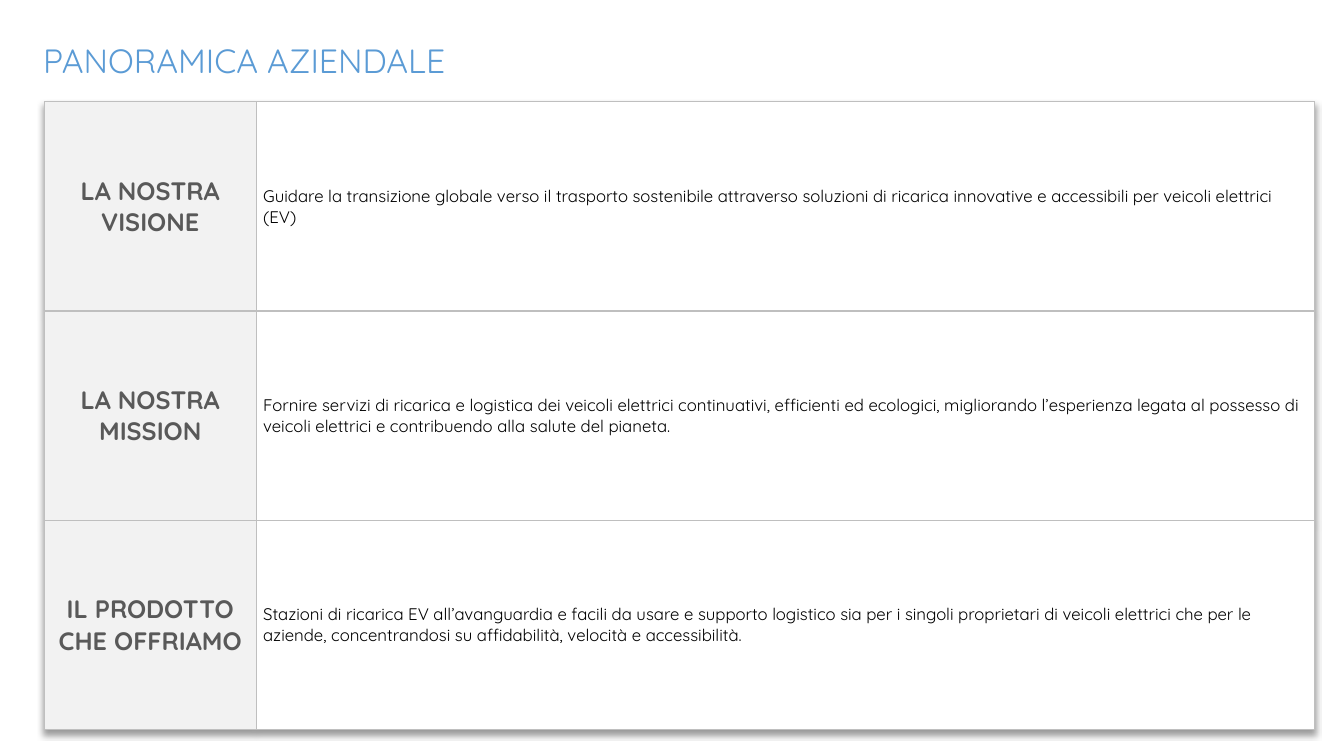
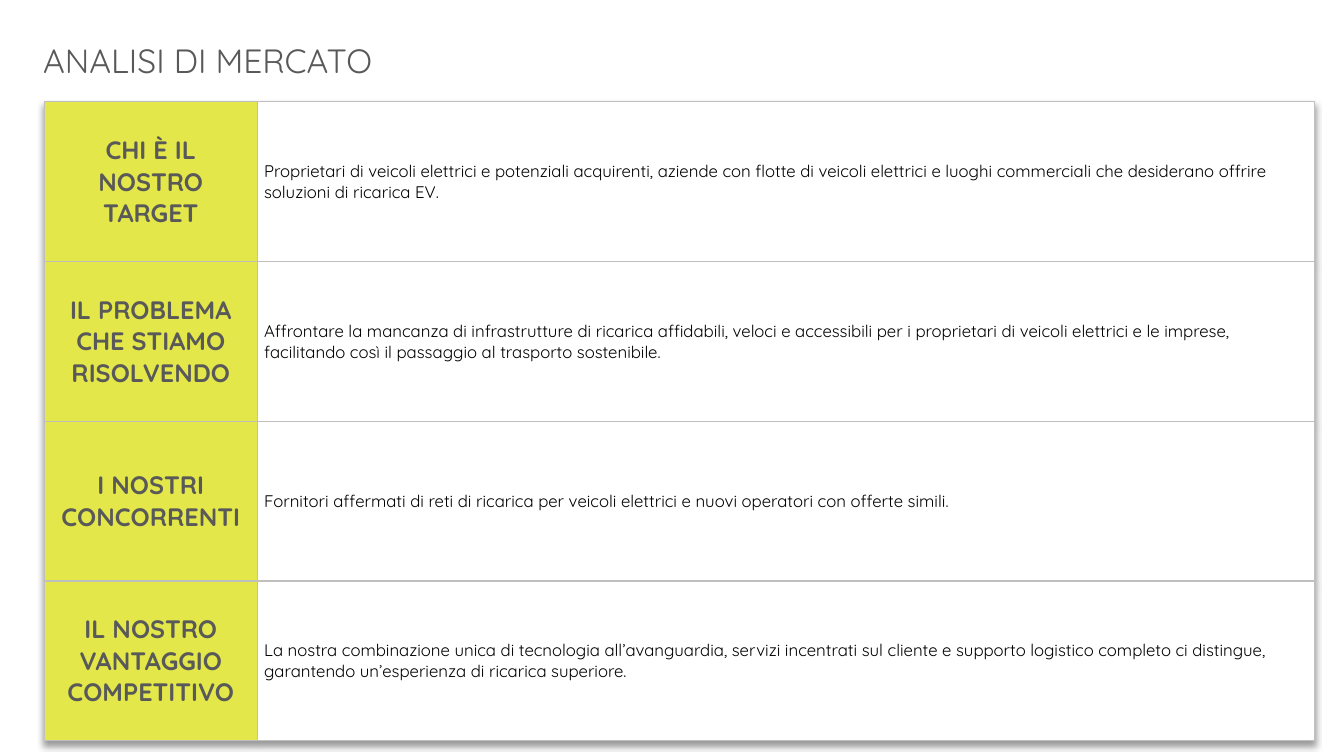
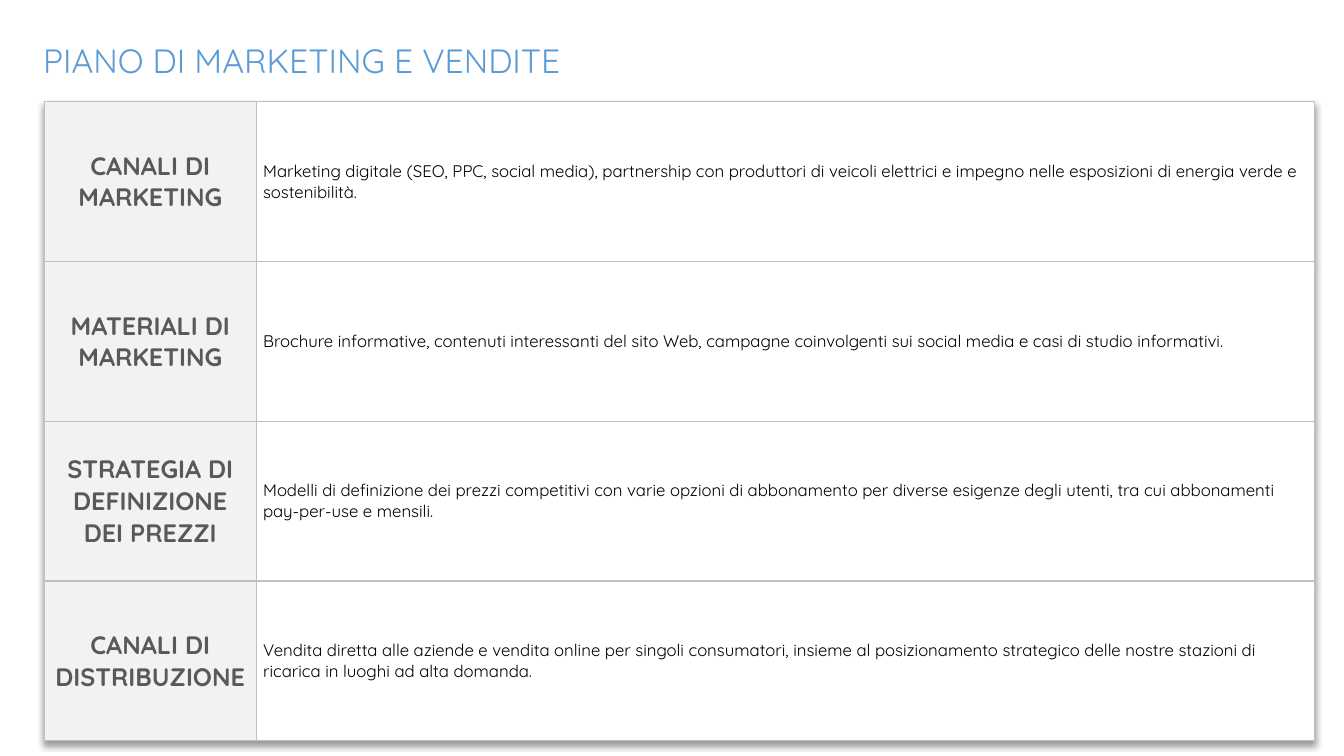
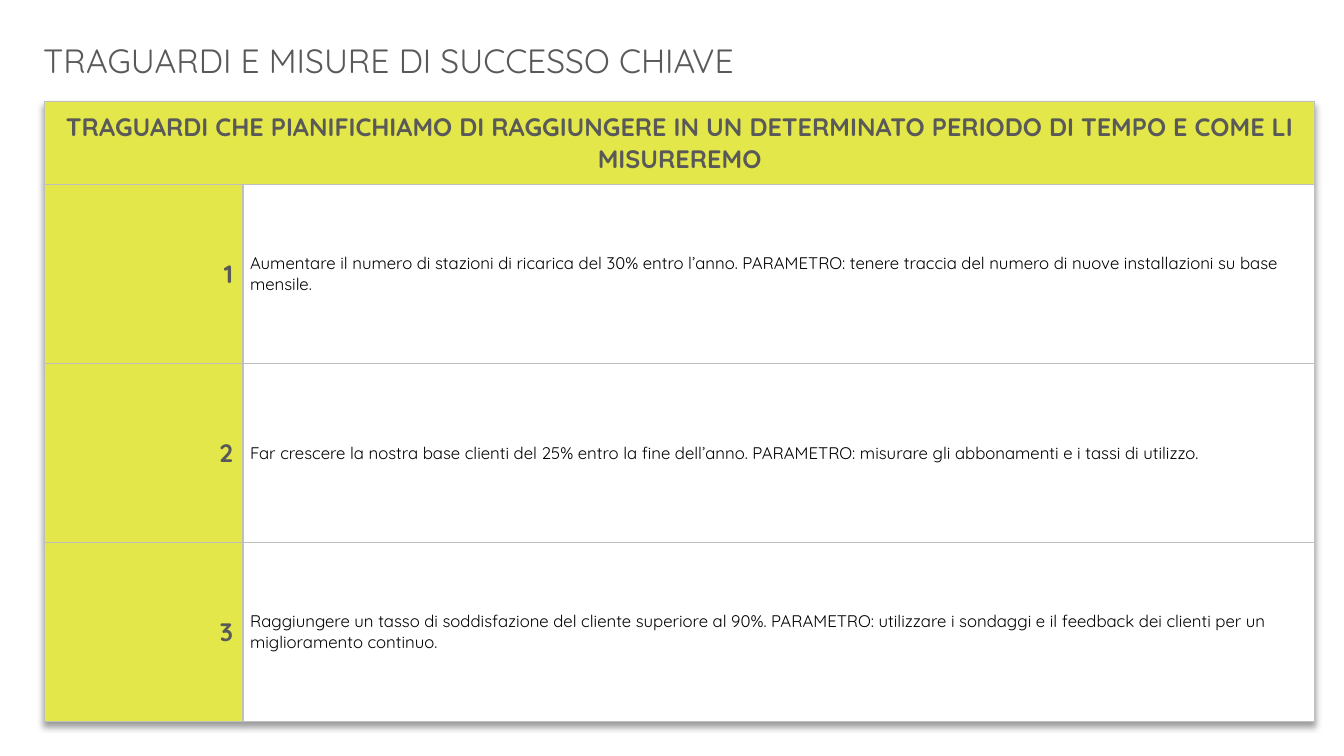
"""Build four business plan slides, each with a title and a table of topics."""
import dataclasses

import lxml.etree
import pptx
import pptx.dml.color
import pptx.enum.text
import pptx.oxml
import pptx.oxml.ns
import pptx.util

Inches = pptx.util.Inches
Pt = pptx.util.Pt
RGB = pptx.dml.color.RGBColor.from_string
Align = pptx.enum.text.PP_ALIGN
Anchor = pptx.enum.text.MSO_ANCHOR
NS = pptx.oxml.ns.nsdecls("a")


@dataclasses.dataclass(frozen=True)
class Theme:
    font: str = "Quicksand"
    blue: str = "5B9BD5"
    dark: str = "595959"
    black: str = "000000"
    white: str = "FFFFFF"
    pale: str = "F2F2F2"
    lime: str = "E3E749"
    border: str = "BFBFBF"
    title_size: int = 24
    label_size: int = 18
    body_size: int = 12
    border_width: int = 1


theme = Theme()
TABLE_LEFT, TABLE_TOP, TABLE_WIDTH = 0.44, 1.01, 12.6
BANNER_HEIGHT = 0.82

SHADOW = f"""<a:effectLst {NS}><a:outerShdw blurRad="50800" dist="38100" dir="5400000" algn="t" rotWithShape="0">
<a:prstClr val="black"><a:alpha val="40000"/></a:prstClr></a:outerShdw></a:effectLst>"""

sections = [
    dict(
        title="PANORAMICA AZIENDALE", title_color=theme.blue, label_fill=theme.pale,
        label_width=2.1, height=6.23, label_align=Align.CENTER, banner=None,
        topics=[
            ("LA NOSTRA VISIONE",
             "Guidare la transizione globale verso il trasporto sostenibile attraverso soluzioni di ricarica "
             "innovative e accessibili per veicoli elettrici (EV)"),
            ("LA NOSTRA MISSION",
             "Fornire servizi di ricarica e logistica dei veicoli elettrici continuativi, efficienti ed ecologici, "
             "migliorando l’esperienza legata al possesso di veicoli elettrici e contribuendo alla salute del pianeta."),
            ("IL PRODOTTO CHE OFFRIAMO",
             "Stazioni di ricarica EV all’avanguardia e facili da usare e supporto logistico sia per i singoli "
             "proprietari di veicoli elettrici che per le aziende, concentrandosi su affidabilità, velocità e "
             "accessibilità."),
        ]),
    dict(
        title="ANALISI DI MERCATO", title_color=theme.dark, label_fill=theme.lime,
        label_width=2.11, height=6.34, label_align=Align.CENTER, banner=None,
        topics=[
            ("CHI È IL NOSTRO TARGET",
             "Proprietari di veicoli elettrici e potenziali acquirenti, aziende con flotte di veicoli elettrici e "
             "luoghi commerciali che desiderano offrire soluzioni di ricarica EV."),
            ("IL PROBLEMA CHE STIAMO RISOLVENDO",
             "Affrontare la mancanza di infrastrutture di ricarica affidabili, veloci e accessibili per i proprietari "
             "di veicoli elettrici e le imprese, facilitando così il passaggio al trasporto sostenibile."),
            ("I NOSTRI CONCORRENTI",
             "Fornitori affermati di reti di ricarica per veicoli elettrici e nuovi operatori con offerte simili."),
            ("IL NOSTRO VANTAGGIO COMPETITIVO",
             "La nostra combinazione unica di tecnologia all’avanguardia, servizi incentrati sul cliente e supporto "
             "logistico completo ci distingue, garantendo un’esperienza di ricarica superiore."),
        ]),
    dict(
        title="PIANO DI MARKETING E VENDITE", title_color=theme.blue, label_fill=theme.pale,
        label_width=2.1, height=6.34, label_align=Align.CENTER, banner=None,
        topics=[
            ("CANALI DI MARKETING",
             "Marketing digitale (SEO, PPC, social media), partnership con produttori di veicoli elettrici e impegno "
             "nelle esposizioni di energia verde e sostenibilità."),
            ("MATERIALI DI MARKETING",
             "Brochure informative, contenuti interessanti del sito Web, campagne coinvolgenti sui social media e "
             "casi di studio informativi."),
            ("STRATEGIA DI DEFINIZIONE DEI PREZZI",
             "Modelli di definizione dei prezzi competitivi con varie opzioni di abbonamento per diverse esigenze "
             "degli utenti, tra cui abbonamenti pay-per-use e mensili."),
            ("CANALI DI DISTRIBUZIONE",
             "Vendita diretta alle aziende e vendita online per singoli consumatori, insieme al posizionamento "
             "strategico delle nostre stazioni di ricarica in luoghi ad alta domanda."),
        ]),
    dict(
        title="TRAGUARDI E MISURE DI SUCCESSO CHIAVE", title_color=theme.dark, label_fill=theme.lime,
        label_width=1.97, height=6.15, label_align=Align.RIGHT,
        banner="TRAGUARDI CHE PIANIFICHIAMO DI RAGGIUNGERE IN UN DETERMINATO PERIODO DI TEMPO E COME LI MISUREREMO",
        topics=[
            ("1",
             "Aumentare il numero di stazioni di ricarica del 30% entro l’anno. PARAMETRO: tenere traccia del numero "
             "di nuove installazioni su base mensile."),
            ("2",
             "Far crescere la nostra base clienti del 25% entro la fine dell’anno. PARAMETRO: misurare gli abbonamenti "
             "e i tassi di utilizzo."),
            ("3",
             "Raggiungere un tasso di soddisfazione del cliente superiore al 90%. PARAMETRO: utilizzare i sondaggi e "
             "il feedback dei clienti per un miglioramento continuo."),
        ]),
]


def write(frame, text, size, color, bold=False, align=Align.LEFT):
    """Add one styled run to the first paragraph of a text frame."""
    paragraph = frame.paragraphs[0]
    paragraph.alignment = align
    run = paragraph.add_run()
    run.text = text
    run.font.name = theme.font
    run.font.size = Pt(size)
    run.font.bold = bold
    run.font.color.rgb = RGB(color)


def dress(cell, fill):
    """Give a table cell its fill, borders and vertical centring."""
    cell.fill.solid()
    cell.fill.fore_color.rgb = RGB(fill)
    cell.vertical_anchor = Anchor.MIDDLE
    for position, side in enumerate(("lnL", "lnR", "lnT", "lnB")):
        border = pptx.oxml.parse_xml(
            f'<a:{side} {NS} w="{Pt(theme.border_width)}"><a:solidFill>'
            f'<a:srgbClr val="{theme.border}"/></a:solidFill></a:{side}>')
        cell._tc.get_or_add_tcPr().insert(position, border)


deck = pptx.Presentation()
deck.slide_width, deck.slide_height = Inches(13.33), Inches(7.5)

for section in sections:
    slide = deck.slides.add_slide(deck.slide_layouts[6])

    heading = slide.shapes.add_textbox(Inches(0.33), Inches(0.35), Inches(8.08), Inches(0.5)).text_frame
    heading.word_wrap = True
    heading.auto_size = pptx.enum.text.MSO_AUTO_SIZE.SHAPE_TO_FIT_TEXT
    write(heading, section["title"], theme.title_size, section["title_color"])

    topics, banner = section["topics"], section["banner"]
    first_topic = 1 if banner else 0
    topic_height = (section["height"] - first_topic * BANNER_HEIGHT) / len(topics)
    plan = slide.shapes.add_table(
        len(topics) + first_topic, 2, Inches(TABLE_LEFT), Inches(TABLE_TOP),
        Inches(TABLE_WIDTH), Inches(section["height"])).table
    plan.first_row = plan.horz_banding = False
    plan._tbl.tblPr.insert(0, pptx.oxml.parse_xml(SHADOW))
    plan.columns[0].width = Inches(section["label_width"])
    plan.columns[1].width = Inches(TABLE_WIDTH - section["label_width"])

    if banner:
        plan.rows[0].height = Inches(BANNER_HEIGHT)
        for cell in plan.rows[0].cells:
            dress(cell, section["label_fill"])
        plan.cell(0, 0).merge(plan.cell(0, 1))
        write(plan.cell(0, 0).text_frame, banner, theme.label_size, theme.dark, True, Align.CENTER)

    for row, (label, description) in enumerate(topics, first_topic):
        plan.rows[row].height = Inches(topic_height)
        label_cell, description_cell = plan.rows[row].cells
        dress(label_cell, section["label_fill"])
        write(label_cell.text_frame, label, theme.label_size, theme.dark, True, section["label_align"])
        dress(description_cell, theme.white)
        description_cell.margin_left = description_cell.margin_right = Inches(0.07)
        description_cell.margin_top = description_cell.margin_bottom = 0
        write(description_cell.text_frame, description, theme.body_size, theme.black)

deck.save("out.pptx")
